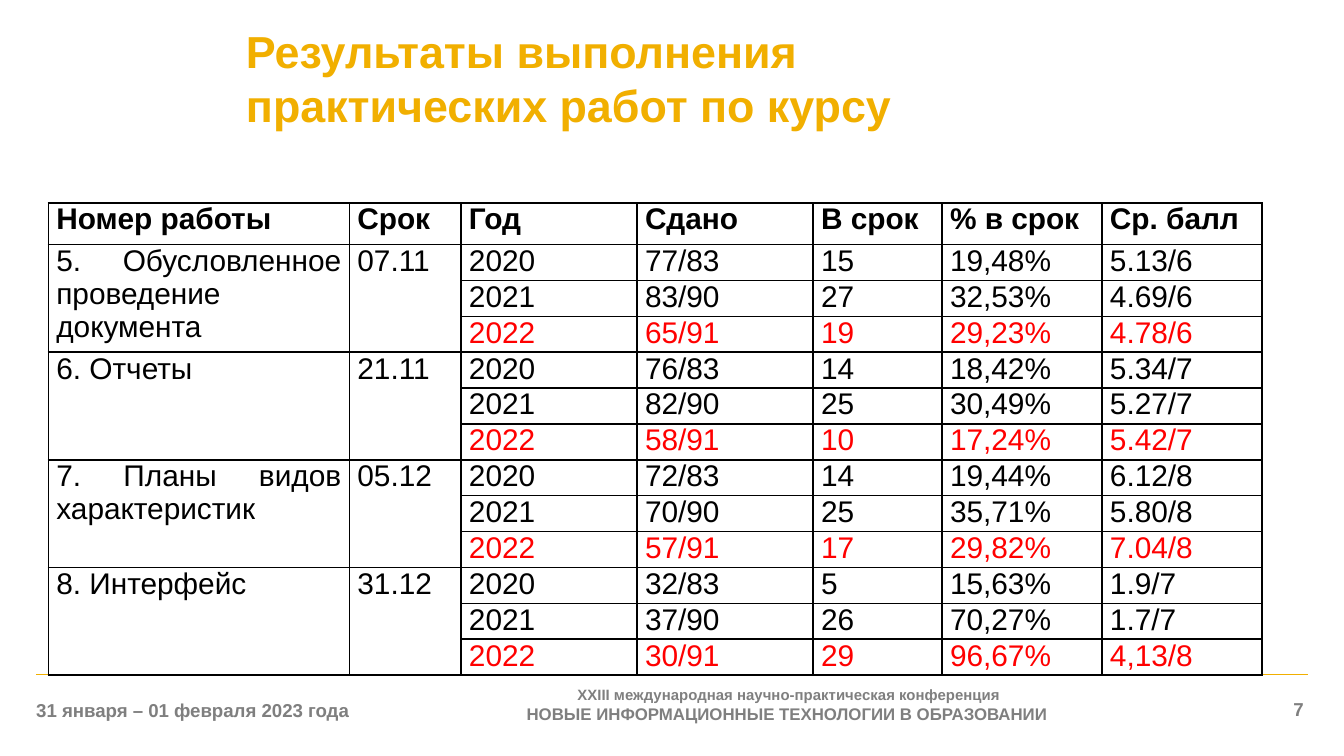
from lxml.etree import SubElement
from pptx import Presentation
from pptx.dml.color import RGBColor
from pptx.enum.text import MSO_ANCHOR, PP_ALIGN
from pptx.oxml.ns import qn
from pptx.util import Inches, Pt

GOLD, GREY, BLACK, RED = "F1AF00", "7F7F7F", "000000", "FF0000"
WIDE = 10
HIGH = WIDE * 9 / 16
COLS = [2.24, 0.83, 1.31, 1.31, 0.96, 1.19, 1.19]
HEAD_H = 0.31
ROW_H = 3.2 / 12
PAD = 0.06
SPAN = 3
HEADS = ["Номер работы", "Срок", "Год", "Сдано", "В срок", "% в срок", "Ср. балл"]
WORKS = [
    ("5. Обусловленное проведение документа", "07.11", [
        ("2020", "77/83", "15", "19,48%", "5.13/6"),
        ("2021", "83/90", "27", "32,53%", "4.69/6"),
        ("2022", "65/91", "19", "29,23%", "4.78/6")]),
    ("6. Отчеты", "21.11", [
        ("2020", "76/83", "14", "18,42%", "5.34/7"),
        ("2021", "82/90", "25", "30,49%", "5.27/7"),
        ("2022", "58/91", "10", "17,24%", "5.42/7")]),
    ("7. Планы видов характеристик", "05.12", [
        ("2020", "72/83", "14", "19,44%", "6.12/8"),
        ("2021", "70/90", "25", "35,71%", "5.80/8"),
        ("2022", "57/91", "17", "29,82%", "7.04/8")]),
    ("8. Интерфейс", "31.12", [
        ("2020", "32/83", "5", "15,63%", "1.9/7"),
        ("2021", "37/90", "26", "70,27%", "1.7/7"),
        ("2022", "30/91", "29", "96,67%", "4,13/8")]),
]


def paint(color):
    return RGBColor.from_string(color)


def style(para, sizes, color, bold=True, align=PP_ALIGN.LEFT):
    """Format the runs of a paragraph, one size for each run."""
    para.alignment = align
    for run, size in zip(para.runs, sizes):
        font = run.font
        font.name, font.size, font.bold = "Arial", Pt(size), bold
        font.color.rgb = paint(color)


def pad(frame, side):
    frame.margin_left = frame.margin_right = Inches(side)
    frame.margin_top = frame.margin_bottom = 0


def add_title(slide, text, box):
    title = slide.shapes.title
    title.left, title.top, title.width, title.height = map(Inches, box)
    frame = title.text_frame
    pad(frame, PAD)
    frame.vertical_anchor = MSO_ANCHOR.MIDDLE
    para = frame.paragraphs[0]
    para.text = text
    style(para, [24, 24], GOLD)


def add_note(slide, text, box, sizes, align):
    frame = slide.shapes.add_textbox(*map(Inches, box)).text_frame
    frame.word_wrap = True
    pad(frame, 0)
    para = frame.paragraphs[0]
    para.text = text
    style(para, sizes, GREY, align=align)


def add_rule(slide, left, right, top):
    ends = map(Inches, (left, top, right, top))
    rule = slide.shapes.add_connector(1, *ends)
    rule.line.color.rgb = paint(GOLD)
    rule.line.width = Pt(0.75)
    SubElement(rule._element.spPr, qn("a:effectLst"))


def frame_cell(cell):
    """Give a cell black borders, no fill and narrow margins."""
    props = cell._tc.get_or_add_tcPr()
    for side in ("lnL", "lnR", "lnT", "lnB"):
        edge = SubElement(props, qn(f"a:{side}"), w=str(Pt(1)))
        fill = SubElement(edge, qn("a:solidFill"))
        SubElement(fill, qn("a:srgbClr"), val=BLACK)
    cell.fill.background()
    pad(cell, PAD)


def write_cell(cell, text, color=BLACK, bold=False):
    para = cell.text_frame.paragraphs[0]
    para.text = text
    style(para, [16], color, bold, PP_ALIGN.JUSTIFY)


def add_grid(slide, left, top):
    count = 1 + SPAN * len(WORKS)
    high = HEAD_H + ROW_H * (count - 1)
    box = map(Inches, (left, top, sum(COLS), high))
    table = slide.shapes.add_table(count, len(COLS), *box).table
    table.first_row = table.horz_banding = False
    for col, width in zip(table.columns, COLS):
        col.width = Inches(width)
    for num, row in enumerate(table.rows):
        row.height = Inches(ROW_H if num else HEAD_H)
    for cell in table.iter_cells():
        frame_cell(cell)
    for col, head in enumerate(HEADS):
        write_cell(table.cell(0, col), head, bold=True)
    for num, (name, due, years) in enumerate(WORKS):
        first = 1 + SPAN * num
        for col, text in enumerate((name, due)):
            cell = table.cell(first, col)
            cell.merge(table.cell(first + SPAN - 1, col))
            write_cell(cell, text)
        for row, year in enumerate(years, first):
            color = RED if year[0] == "2022" else BLACK
            for col, text in enumerate(year, 2):
                write_cell(table.cell(row, col), text, color)


def main():
    deck = Presentation()
    deck.slide_width, deck.slide_height = Inches(WIDE), Inches(HIGH)
    slide = deck.slides.add_slide(deck.slide_layouts[5])
    add_rule(slide, 0.27, 9.73, 5.02)
    add_title(slide, "Результаты выполнения \nпрактических работ по курсу",
              (1.77, 0.17, 7.56, 0.81))
    add_note(slide, "31 января – 01 февраля 2023 года",
             (0.27, 5.2, 2.36, 0.17), [10], PP_ALIGN.LEFT)
    add_note(slide, "XXIII международная научно-практическая конференция\n"
             "НОВЫЕ ИНФОРМАЦИОННЫЕ ТЕХНОЛОГИИ В ОБРАЗОВАНИИ ",
             (2.64, 5.1, 6.46, 0.29), [8, 9], PP_ALIGN.CENTER)
    add_note(slide, "7", (8.86, 5.19, 0.84, 0.17), [10], PP_ALIGN.RIGHT)
    add_grid(slide, 0.36, 1.51)
    deck.save("out.pptx")


if __name__ == "__main__":
    main()
